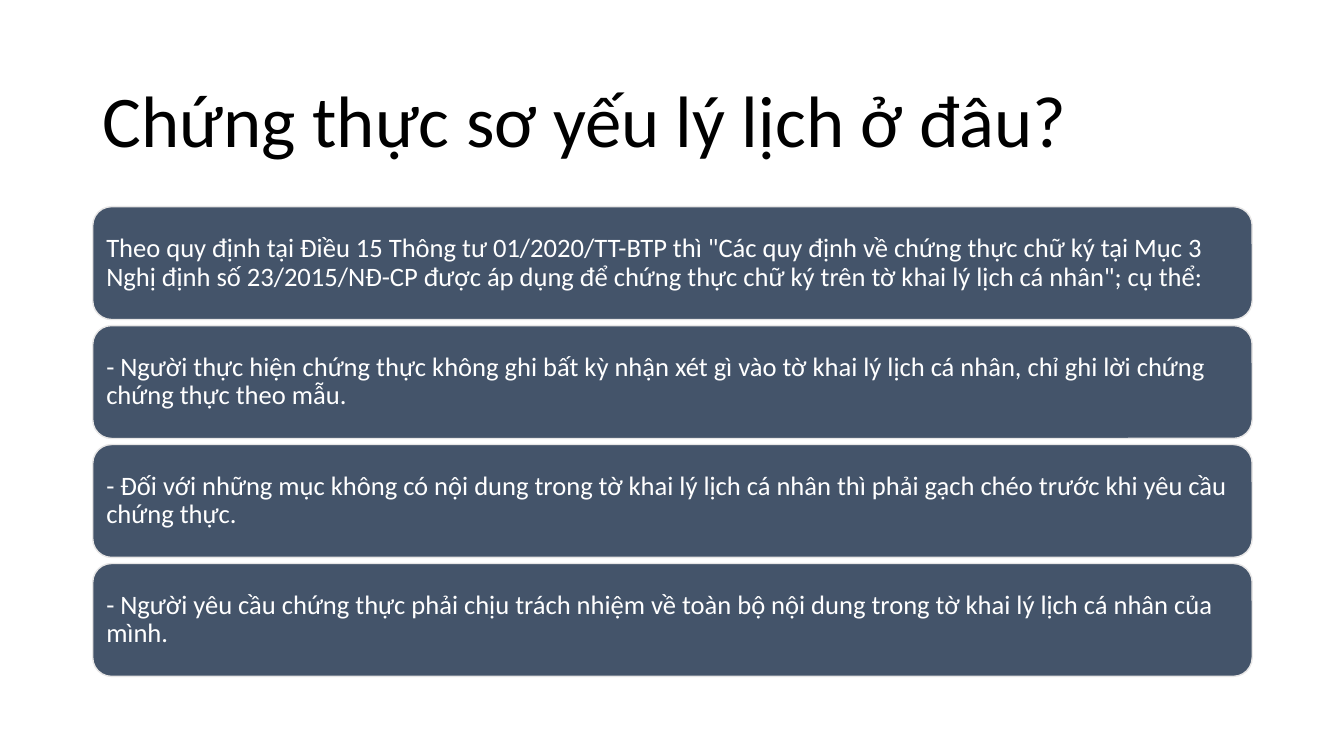
from pptx import Presentation
from pptx.dml.color import RGBColor
from pptx.enum.shapes import MSO_SHAPE
from pptx.enum.text import MSO_ANCHOR, PP_ALIGN
from pptx.util import Inches, Pt

TITLE = "Chứng thực sơ yếu lý lịch ở đâu?"
RULES = [
    'Theo quy định tại Điều 15 Thông tư 01/2020/TT-BTP thì "Các quy định về chứng thực '
    "chữ ký tại Mục 3 Nghị định số 23/2015/NĐ-CP được áp dụng để chứng thực chữ ký "
    'trên tờ khai lý lịch cá nhân"; cụ thể:',
    "- Người thực hiện chứng thực không ghi bất kỳ nhận xét gì vào tờ khai lý lịch "
    "cá nhân, chỉ ghi lời chứng chứng thực theo mẫu.",
    "- Đối với những mục không có nội dung trong tờ khai lý lịch cá nhân thì phải "
    "gạch chéo trước khi yêu cầu chứng thực.",
    "- Người yêu cầu chứng thực phải chịu trách nhiệm về toàn bộ nội dung trong tờ khai "
    "lý lịch cá nhân của mình.",
]

BLACK = RGBColor(0x00, 0x00, 0x00)
WHITE = RGBColor(0xFF, 0xFF, 0xFF)
SLATE = RGBColor(0x44, 0x54, 0x6A)
PALE_GREY = RGBColor(0xE7, 0xE6, 0xE6)

LEFT, WIDTH = 0.92, 11.5
TITLE_TOP, TITLE_HEIGHT = 0.61, 1.24
RULES_TOP, RULE_HEIGHT, RULE_STEP = 2.05, 1.12, 1.18


def write(shape, text, *, size, color, inset):
    frame = shape.text_frame
    frame.word_wrap = True
    frame.vertical_anchor = MSO_ANCHOR.MIDDLE
    frame.margin_left = frame.margin_right = Inches(inset)
    frame.margin_top = frame.margin_bottom = Inches(inset)
    para = frame.paragraphs[0]
    para.alignment = PP_ALIGN.LEFT
    para.line_spacing = 0.9
    span = para.add_run()
    span.text = text
    span.font.name = "Calibri"
    span.font.size = Pt(size)
    span.font.color.rgb = color


def add_rule(page, top, text):
    box = page.shapes.add_shape(
        MSO_SHAPE.ROUNDED_RECTANGLE,
        Inches(LEFT), Inches(top), Inches(WIDTH), Inches(RULE_HEIGHT),
    )
    box.shadow.inherit = False
    box.fill.solid()
    box.fill.fore_color.rgb = SLATE
    box.line.color.rgb = PALE_GREY
    box.line.width = Pt(1)
    write(box, text, size=19, color=WHITE, inset=0.08)


def main():
    deck = Presentation()
    deck.slide_width, deck.slide_height = Inches(13.33), Inches(7.5)
    page = deck.slides.add_slide(deck.slide_layouts.get_by_name("Title Only"))

    title = page.shapes.title
    title.left, title.top = Inches(LEFT), Inches(TITLE_TOP)
    title.width, title.height = Inches(WIDTH), Inches(TITLE_HEIGHT)
    write(title, TITLE, size=52, color=BLACK, inset=0.1)

    for index, rule in enumerate(RULES):
        add_rule(page, RULES_TOP + index * RULE_STEP, rule)

    deck.save("out.pptx")


if __name__ == "__main__":
    main()
